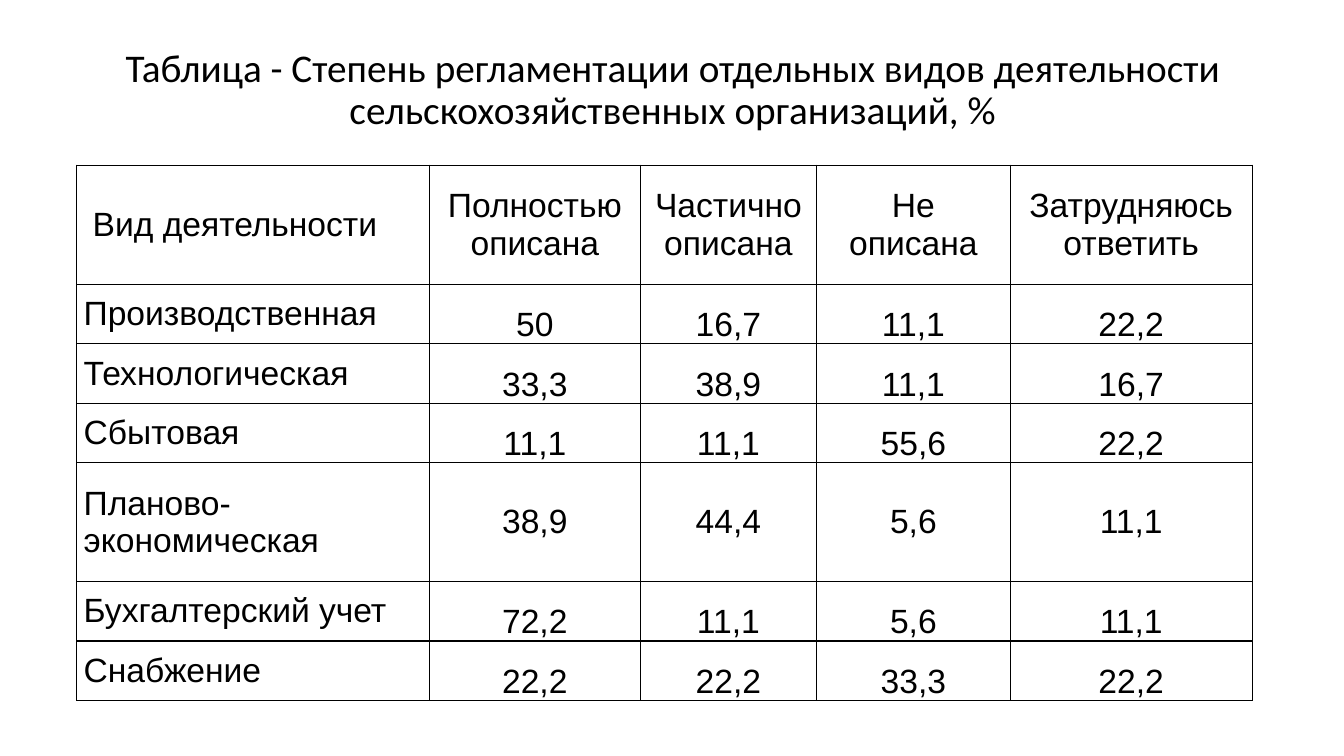
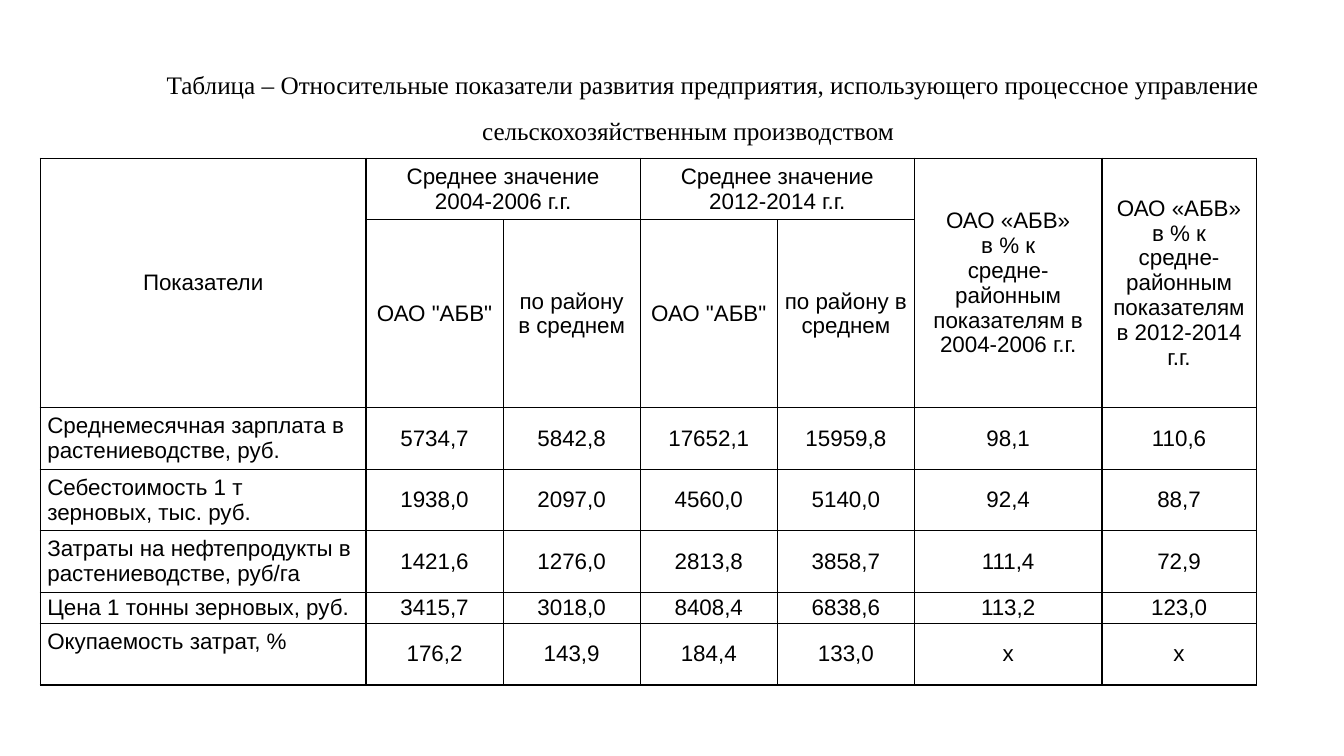
"""Build two slides with tables on process regulation in farming enterprises."""
import pptx
import pptx.dml.color
import pptx.enum.text
import pptx.oxml
import pptx.oxml.ns
import pptx.util

Inches = pptx.util.Inches
Pt = pptx.util.Pt
Align = pptx.enum.text.PP_ALIGN
Anchor = pptx.enum.text.MSO_ANCHOR

INK = "000000"
CELL_FONT = "Arial"
CELL_MARGIN = 0.07
BORDER_WIDTH = 1

REGULATION_TITLE = {
    "text": "Таблица - Степень регламентации отдельных видов деятельности "
            "сельскохозяйственных организаций, %",
    "box": (0.92, 0.4, 11.5, 1.0), "font": "Calibri", "size": 28,
    "spacing": 0.9, "indent": 0, "anchor": Anchor.MIDDLE,
}
REGULATION_TABLE = {
    "origin": (0.76, 1.64), "size": 24,
    "columns": [3.5, 2.09, 1.75, 1.92, 2.4],
    "heights": [1.18, 0.59, 0.59, 0.59, 1.18, 0.59, 0.59],
    "rows": [
        ["Вид деятельности", "Полностью\nописана", "Частично\nописана",
         "Не\nописана", "Затрудняюсь\nответить"],
        ["Производственная", "50", "16,7", "11,1", "22,2"],
        ["Технологическая", "33,3", "38,9", "11,1", "16,7"],
        ["Сбытовая", "11,1", "11,1", "55,6", "22,2"],
        ["Планово-экономическая", "38,9", "44,4", "5,6", "11,1"],
        ["Бухгалтерский учет", "72,2", "11,1", "5,6", "11,1"],
        ["Снабжение", "22,2", "22,2", "33,3", "22,2"],
    ],
    "merges": [],
}

INDICATORS_TITLE = {
    "text": "Таблица – Относительные показатели развития предприятия, использующего "
            "процессное управление сельскохозяйственным производством",
    "box": (0.56, 0.49, 12.53, 0.96), "font": "Times New Roman", "size": 18,
    "spacing": 1.5, "indent": 0.49, "anchor": Anchor.TOP,
}
INDICATORS_TABLE = {
    "origin": (0.4, 1.57), "size": 16,
    "columns": [3.23, 1.36, 1.36, 1.36, 1.36, 1.86, 1.53],
    "heights": [0.61, 1.73, 0.61, 0.61, 0.61, 0.31, 0.61],
    "rows": [
        ["Показатели", "Среднее значение\n2004-2006 г.г.", "",
         "Среднее значение\n2012-2014 г.г.", "",
         "ОАО «АБВ»\nв % к\nсредне-районным\nпоказателям в\n2004-2006 г.г.",
         "ОАО «АБВ»\nв % к средне-районным показателям в 2012-2014 г.г."],
        ["", 'ОАО "АБВ"', "по району\nв среднем", 'ОАО "АБВ"', "по району в среднем", "", ""],
        ["Среднемесячная зарплата в растениеводстве, руб.",
         "5734,7", "5842,8", "17652,1", "15959,8", "98,1", "110,6"],
        ["Себестоимость 1 т\nзерновых, тыс. руб.",
         "1938,0", "2097,0", "4560,0", "5140,0", "92,4", "88,7"],
        ["Затраты на нефтепродукты в растениеводстве, руб/га",
         "1421,6", "1276,0", "2813,8", "3858,7", "111,4", "72,9"],
        ["Цена 1 тонны зерновых, руб.",
         "3415,7", "3018,0", "8408,4", "6838,6", "113,2", "123,0"],
        ["Окупаемость затрат, %", "176,2", "143,9", "184,4", "133,0", "х", "х"],
    ],
    "merges": [(0, 0, 1, 0), (0, 1, 0, 2), (0, 3, 0, 4), (0, 5, 1, 5), (0, 6, 1, 6)],
}


def color(hex_value):
    return pptx.dml.color.RGBColor.from_string(hex_value)


def style_font(font, name, size):
    font.name = name
    font.size = Pt(size)
    font.color.rgb = color(INK)


def add_title(slide, title):
    shape = slide.shapes.add_textbox(*map(Inches, title["box"]))
    frame = shape.text_frame
    frame.word_wrap = True
    frame.vertical_anchor = title["anchor"]
    paragraph = frame.paragraphs[0]
    paragraph.text = title["text"]
    paragraph.alignment = Align.CENTER
    paragraph.line_spacing = title["spacing"]
    paragraph._p.get_or_add_pPr().set("indent", str(Inches(title["indent"])))
    style_font(paragraph.font, title["font"], title["size"])


def add_borders(cell):
    properties = cell._tc.get_or_add_tcPr()
    for position, side in enumerate(("lnL", "lnR", "lnT", "lnB")):
        properties.insert(position, pptx.oxml.parse_xml(
            f'<a:{side} {pptx.oxml.ns.nsdecls("a")} w="{Pt(BORDER_WIDTH)}">'
            f'<a:solidFill><a:srgbClr val="{INK}"/></a:solidFill></a:{side}>'))


def fill_cell(cell, text, size, alignment):
    cell.fill.background()
    add_borders(cell)
    cell.margin_left = cell.margin_right = Inches(CELL_MARGIN)
    cell.margin_top = cell.margin_bottom = 0
    cell.vertical_anchor = Anchor.MIDDLE
    cell.text = text
    for paragraph in cell.text_frame.paragraphs:
        paragraph.alignment = alignment
        style_font(paragraph.font, CELL_FONT, size)


def add_table(slide, content):
    rows, columns, heights = content["rows"], content["columns"], content["heights"]
    left, top = content["origin"]
    table = slide.shapes.add_table(
        len(rows), len(columns), Inches(left), Inches(top),
        Inches(sum(columns)), Inches(sum(heights))).table
    table.first_row = table.horz_banding = False
    for column, width in zip(table.columns, columns):
        column.width = Inches(width)
    for row, height in zip(table.rows, heights):
        row.height = Inches(height)
    for row_index, row in enumerate(rows):
        for column_index, text in enumerate(row):
            is_label = row_index > 0 and column_index == 0
            fill_cell(table.cell(row_index, column_index), text, content["size"],
                      Align.LEFT if is_label else Align.CENTER)
    for first_row, first_column, last_row, last_column in content["merges"]:
        table.cell(first_row, first_column).merge(table.cell(last_row, last_column))
    return table


def build_regulation_slide(slide):
    add_title(slide, REGULATION_TITLE)
    table = add_table(slide, REGULATION_TABLE)
    heading = table.cell(0, 0)
    heading.margin_left = Inches(0.16)
    heading.text_frame.paragraphs[0].alignment = Align.LEFT
    single_line = min(REGULATION_TABLE["heights"])
    for row_index, height in enumerate(REGULATION_TABLE["heights"]):
        if height == single_line:
            for column_index in range(1, len(table.columns)):
                table.cell(row_index, column_index).vertical_anchor = Anchor.BOTTOM


def build_indicators_slide(slide):
    table = add_table(slide, INDICATORS_TABLE)
    payback_label = table.cell(len(table.rows) - 1, 0)
    payback_label.vertical_anchor = Anchor.TOP
    payback_label.margin_top = Inches(0.06)
    add_title(slide, INDICATORS_TITLE)


def main():
    presentation = pptx.Presentation()
    presentation.slide_width = Inches(13.33)
    presentation.slide_height = Inches(7.5)
    for build in (build_regulation_slide, build_indicators_slide):
        build(presentation.slides.add_slide(presentation.slide_layouts[6]))
    presentation.save("out.pptx")


if __name__ == "__main__":
    main()
